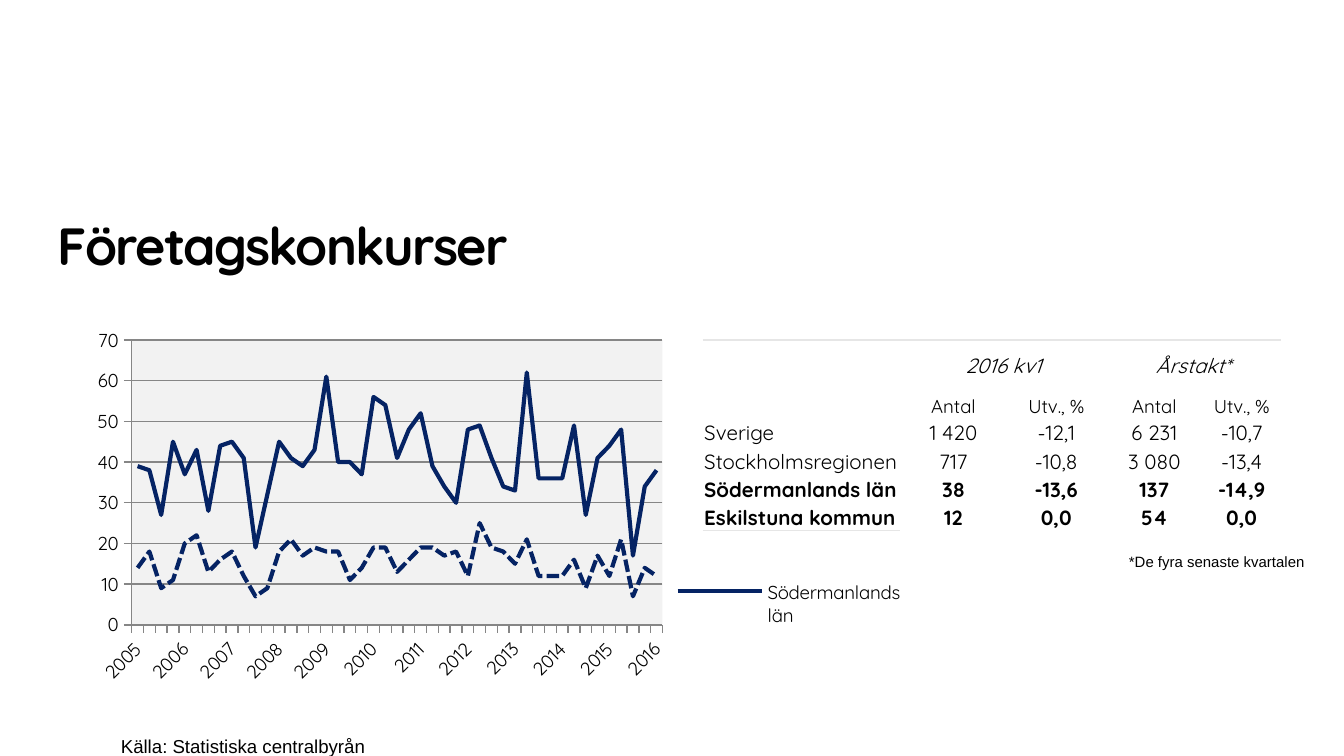
from lxml import etree
from pptx import Presentation
from pptx.chart.data import CategoryChartData
from pptx.dml.color import RGBColor
from pptx.enum.chart import XL_CHART_TYPE, XL_LEGEND_POSITION, XL_MARKER_STYLE, XL_TICK_MARK
from pptx.enum.dml import MSO_LINE
from pptx.enum.text import MSO_ANCHOR, MSO_AUTO_SIZE, PP_ALIGN
from pptx.oxml import parse_xml
from pptx.oxml.ns import nsdecls, qn
from pptx.util import Inches, Pt

LINE_CHART = XL_CHART_TYPE.LINE
LEGEND_RIGHT = XL_LEGEND_POSITION.RIGHT
NO_MARKER = XL_MARKER_STYLE.NONE
TICK_OUTSIDE = XL_TICK_MARK.OUTSIDE
DASH = MSO_LINE.SQUARE_DOT
BOTTOM = MSO_ANCHOR.BOTTOM
FIXED_SIZE = MSO_AUTO_SIZE.NONE
LEFT, CENTER = PP_ALIGN.LEFT, PP_ALIGN.CENTER
BLACK, NAVY, GRID, PLOT, RULE = "000000", "052364", "868686", "F2F2F2", "E6E6E6"
PLAIN_TABLE_STYLE = "{2D5ABB26-0587-4C30-8999-92F81FD0307C}"


def color(value):
    return RGBColor.from_string(value)


def format_font(font, **values):
    """Set the given font attributes, in black."""
    for name, value in values.items():
        setattr(font, name, value)
    font.color.rgb = color(BLACK)


presentation = Presentation()
presentation.slide_width = Inches(10)
presentation.slide_height = Inches(10) * 9 // 16
slide = presentation.slides.add_slide(presentation.slide_layouts[6])

# Title, source and footnote
texts = [
    ("Företagskonkurser", (0.43, 1.59, 6.21, 0.8), True, None,
     {"name": "Quicksand", "size": Pt(28), "bold": True}),
    ("Källa: Statistiska centralbyrån", (0.9, 5.3, 1.9, 0.42), False, Pt(24),
     {"name": "Arial", "size": Pt(10)}),
    ("*De fyra senaste kvartalen", (8.4, 3.91, 1.4, 1), False, Pt(24),
     {"name": "Arial", "size": Pt(8)}),
]
for text, box, wrap, line_spacing, font_values in texts:
    frame = slide.shapes.add_textbox(*map(Inches, box)).text_frame
    frame.word_wrap = wrap
    frame.auto_size = FIXED_SIZE
    for side in ("left", "top", "right", "bottom"):
        setattr(frame, f"margin_{side}", 0)
    paragraph = frame.paragraphs[0]
    paragraph.line_spacing = line_spacing
    run = paragraph.add_run()
    run.text = text
    format_font(run.font, **font_values)
    if font_values.get("bold"):
        run.font._element.set("spc", "-90")

# Table
rows = [
    ["", "2016 kv1", "", "Årstakt*", ""],
    ["", "Antal", "Utv., %", "Antal", "Utv., %"],
    ["Sverige", "1 420", "-12,1", "6 231", "-10,7"],
    ["Stockholmsregionen", "717", "-10,8", "3 080", "-13,4"],
    ["Södermanlands län", "38", "-13,6", "137", "-14,9"],
    ["Eskilstuna kommun", "12", "0,0", "54", "0,0"],
]
column_widths = [1.47, 0.79, 0.74, 0.72, 0.58]
row_heights = [0.29, 0.29] + [0.21] * 4
graphic_frame = slide.shapes.add_table(
    len(rows), len(column_widths), Inches(5.23), Inches(2.53),
    Inches(sum(column_widths)), Inches(sum(row_heights)))
table = graphic_frame.table
table.first_row = table.horz_banding = False
graphic_frame._element.find(".//" + qn("a:tableStyleId")).text = PLAIN_TABLE_STYLE
for column, width in zip(table.columns, column_widths):
    column.width = Inches(width)
for row, height in zip(table.rows, row_heights):
    row.height = Inches(height)
for first in (1, 3):
    table.cell(0, first).merge(table.cell(0, first + 1))

for row_index, row in enumerate(rows):
    for column_index, text in enumerate(row):
        cell = table.cell(row_index, column_index)
        cell.vertical_anchor = BOTTOM
        cell.margin_left = cell.margin_top = cell.margin_right = Inches(0.01)
        cell.margin_bottom = 0
        paragraph = cell.text_frame.paragraphs[0]
        paragraph.alignment = CENTER if column_index else LEFT
        if text:
            run = paragraph.add_run()
            run.text = text
            format_font(run.font, name="Quicksand", size=Pt(10 if row_index == 1 else 11),
                        bold=row_index >= 4, italic=row_index == 0)
        else:
            etree.SubElement(paragraph._p, qn("a:endParaRPr")).set("sz", "1000")
        edge = None
        if row_index == 0:
            edge = "lnT"
        elif row_index == len(rows) - 1 and column_index == 0:
            edge = "lnB"
        if edge:
            cell._tc.get_or_add_tcPr().append(parse_xml(
                f'<a:{edge} {nsdecls("a")} w="12700"><a:solidFill>'
                f'<a:srgbClr val="{RULE}"/></a:solidFill></a:{edge}>'))
        cell.fill.background()

# Chart: quarterly values, labelled at the first quarter of each year
series_values = {
    "Södermanlands län": [
        39, 38, 27, 45, 37, 43, 28, 44, 45, 41, 19, 32, 45, 41, 39, 43,
        61, 40, 40, 37, 56, 54, 41, 48, 52, 39, 34, 30, 48, 49, 41, 34,
        33, 62, 36, 36, 36, 49, 27, 41, 44, 48, 17, 34, 38],
    "Eskilstuna kommun": [
        14, 18, 9, 11, 20, 22, 13, 16, 18, 12, 7, 9, 18, 21, 17, 19,
        18, 18, 11, 14, 19, 19, 13, 16, 19, 19, 17, 18, 12, 25, 19, 18,
        15, 21, 12, 12, 12, 16, 9, 17, 12, 21, 7, 14, 12],
}
chart_data = CategoryChartData(number_format="General")
chart_data.categories = ["" if quarter % 4 else str(2005 + quarter // 4)
                         for quarter in range(45)]
for name, values in series_values.items():
    chart_data.add_series(name, values)
chart_width, chart_height = 6.3, 2.76
chart = slide.shapes.add_chart(LINE_CHART, Inches(0.6), Inches(2.39), Inches(chart_width),
                               Inches(chart_height), chart_data).chart
format_font(chart.font, name="Quicksand", size=Pt(10))
chart.has_title = False
chart.plots[0].vary_by_categories = False
for series, dash in zip(chart.plots[0].series, (None, DASH)):
    series.smooth = False
    series.format.line.color.rgb = color(NAVY)
    series.format.line.width = Pt(2.25)
    series.format.line.dash_style = dash
    series.marker.style = NO_MARKER

value_axis, category_axis = chart.value_axis, chart.category_axis
value_axis.minimum_scale = 0
value_axis.maximum_scale = 70
value_axis.major_unit = 10
value_axis.tick_labels.number_format = "#,##0"
value_axis.tick_labels.number_format_is_linked = False
value_axis.has_major_gridlines = True
for line in (value_axis.major_gridlines.format.line,
             value_axis.format.line, category_axis.format.line):
    line.color.rgb = color(GRID)
    line.width = Pt(0.75)
for axis in (value_axis, category_axis):
    axis.major_tick_mark = TICK_OUTSIDE
    format_font(axis.tick_labels.font, name="Quicksand", size=Pt(10))
category_axis._element.find(".//" + qn("a:bodyPr")).set("rot", "-2700000")
no_multi_level = category_axis._element.find(qn("c:noMultiLvlLbl"))
for tag, step in (("tickLblSkip", 4), ("tickMarkSkip", 1)):
    no_multi_level.addprevious(parse_xml(f'<c:{tag} {nsdecls("c")} val="{step}"/>'))

chart.has_legend = True
legend = chart.legend
legend.position = LEGEND_RIGHT
legend.include_in_layout = False
format_font(legend.font, name="Quicksand", size=Pt(10))
legend._element.find(qn("c:legendPos")).addnext(parse_xml(
    f'<c:legendEntry {nsdecls("c")}><c:idx val="1"/><c:delete val="1"/></c:legendEntry>'))

plot_area = chart._chartSpace.chart.plotArea
plot_area.append(parse_xml(
    f'<c:spPr {nsdecls("c", "a")}><a:solidFill><a:srgbClr val="{PLOT}"/></a:solidFill></c:spPr>'))
# Left, top, width and height in inches inside the chart
layouts = [
    (plot_area, '<c:layoutTarget val="inner"/>', (0.38, 0.14, 3.95, 2.12)),
    (legend._element, "", (4.39, 1.83, 1.76, 0.55)),
]
for parent, target, (left, top, width, height) in layouts:
    for old_layout in parent.findall(qn("c:layout")):
        parent.remove(old_layout)
    layout = parse_xml(
        f'<c:layout {nsdecls("c")}><c:manualLayout>{target}'
        f'<c:xMode val="edge"/><c:yMode val="edge"/>'
        f'<c:x val="{left / chart_width}"/><c:y val="{top / chart_height}"/>'
        f'<c:w val="{width / chart_width}"/><c:h val="{height / chart_height}"/>'
        f'</c:manualLayout></c:layout>')
    if target:
        parent.insert(0, layout)
    else:
        parent.find(qn("c:legendEntry")).addnext(layout)

presentation.save("out.pptx")
